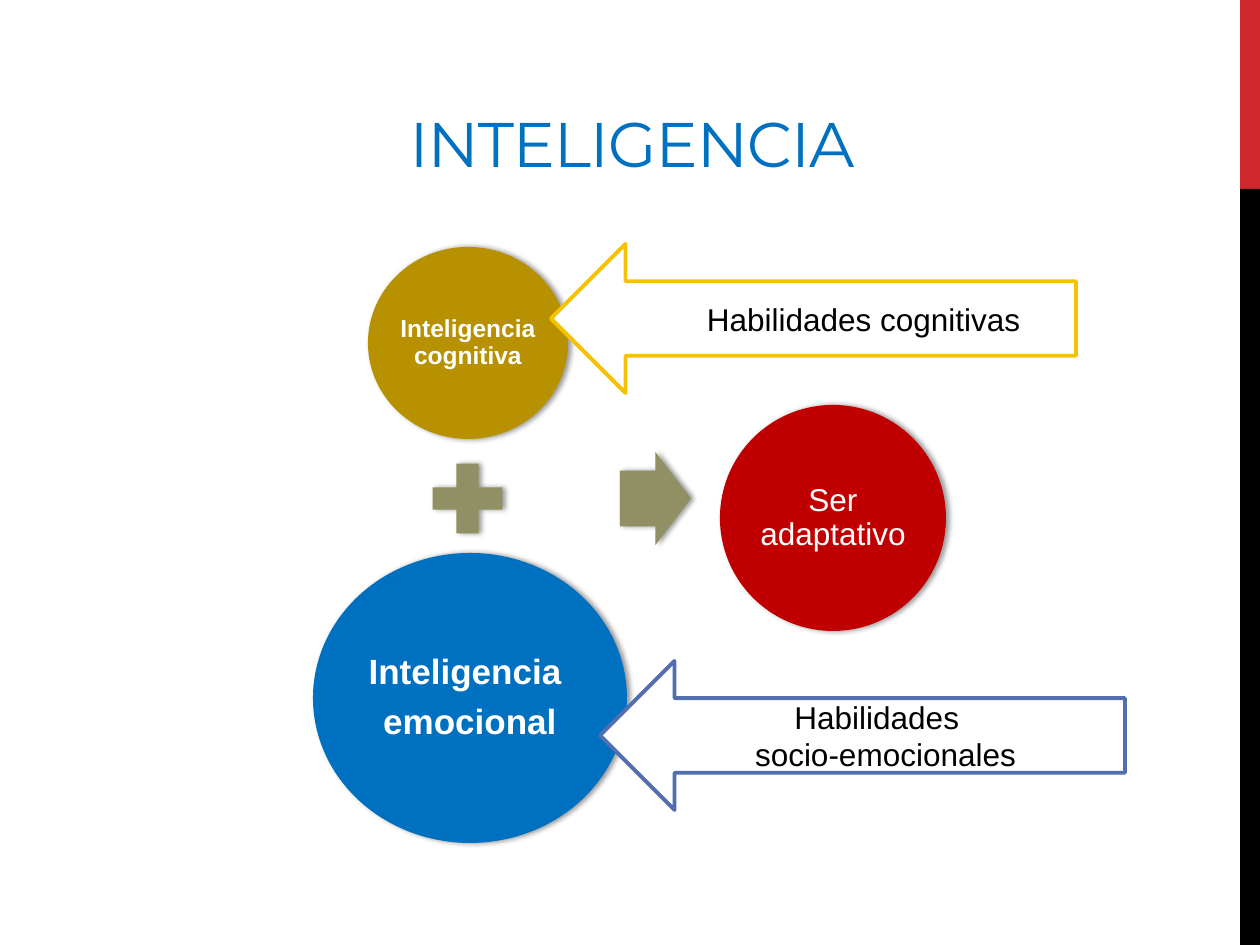
from dataclasses import dataclass

import lxml.etree
import pptx
import pptx.dml.color
import pptx.enum.shapes
import pptx.enum.text
import pptx.oxml.ns
import pptx.util

EMU_PER_PX = 914400 / 126
SHAPE = pptx.enum.shapes.MSO_SHAPE
ANCHOR = pptx.enum.text.MSO_ANCHOR


@dataclass
class Box:
    left: int
    top: int
    width: int
    height: int


@dataclass
class Circle:
    box: Box
    fill: str
    lines: list[str]
    size: int
    bold: bool
    inset: int


@dataclass
class Callout:
    box: Box
    outline: str
    lines: list[str]
    indent: int


CIRCLES = [
    Circle(Box(368, 247, 200, 192), "B89101", ["Inteligencia cognitiva"], 14, True, 2),
    Circle(Box(313, 553, 314, 290), "0070C0", ["Inteligencia ", "emocional"], 20, True, 4),
    Circle(Box(720, 405, 226, 226), "C00000", ["Ser adaptativo"], 18, False, 4),
]
CALLOUTS = [
    Callout(Box(551, 244, 525, 149), "F5C201", ["Habilidades cognitivas"], 63),
    Callout(Box(600, 661, 525, 149), "526DB0", ["Habilidades ", " socio-emocionales"], 0),
]
OPERATORS = [
    (SHAPE.MATH_PLUS, Box(420, 451, 95, 95)),
    (SHAPE.RIGHT_ARROW, Box(620, 452, 71, 93)),
]
SIDE_BARS = [(Box(1240, 0, 20, 189), "D1282E"), (Box(1240, 189, 20, 756), "000000")]


def px(length: int) -> int:
    return round(length * EMU_PER_PX)


def color(code: str) -> pptx.dml.color.RGBColor:
    return pptx.dml.color.RGBColor.from_string(code)


def edges(box: Box) -> list[int]:
    return [px(side) for side in (box.left, box.top, box.width, box.height)]


def add_figure(slide, kind, box: Box, fill: str, outline: str = ""):
    figure = slide.shapes.add_shape(kind, *edges(box))
    figure.shadow.inherit = False
    figure.fill.solid()
    figure.fill.fore_color.rgb = color(fill)
    if outline:
        figure.line.color.rgb = color(outline)
        figure.line.width = pptx.util.Pt(2.25)
    else:
        figure.line.fill.background()
    return figure


def add_shadow(figure) -> None:
    """Cast a soft black shadow to the right of the figure."""
    qn = pptx.oxml.ns.qn
    effects = figure.element.spPr.find(qn("a:effectLst"))
    shadow = lxml.etree.SubElement(
        effects, qn("a:outerShdw"), blurRad=str(pptx.util.Pt(3.1)),
        dist=str(pptx.util.Pt(1.8)), dir="0", rotWithShape="0")
    black = lxml.etree.SubElement(shadow, qn("a:srgbClr"), val="000000")
    lxml.etree.SubElement(black, qn("a:alpha"), val="40000")


def write_text(shape, lines: list[str], *, size: int, ink: str, font: str = "Arial",
               bold: bool = False, anchor=ANCHOR.MIDDLE, inset: int | None = None,
               line_spacing: float = 1.0, space_after: float = 0, indent: int = 0,
               tracking: int = 0) -> None:
    frame = shape.text_frame
    frame.word_wrap = True
    frame.auto_size = pptx.enum.text.MSO_AUTO_SIZE.NONE
    frame.vertical_anchor = anchor
    if inset is not None:
        frame.margin_left = frame.margin_right = px(inset)
        frame.margin_top = frame.margin_bottom = px(inset)
    for index, line in enumerate(lines):
        paragraph = frame.add_paragraph() if index else frame.paragraphs[0]
        paragraph.alignment = pptx.enum.text.PP_ALIGN.CENTER
        paragraph.line_spacing = line_spacing
        paragraph.space_after = pptx.util.Pt(space_after)
        if indent:
            paragraph.level = 1
            paragraph._p.get_or_add_pPr().set("marL", str(px(indent)))
        run = paragraph.add_run()
        run.text = line
        run.font.name = font
        run.font.size = pptx.util.Pt(size)
        run.font.bold = bold
        run.font.color.rgb = color(ink)
        if tracking:
            run._r.get_or_add_rPr().set("spc", str(tracking))


def add_circle(slide, circle: Circle) -> None:
    disc = add_figure(slide, SHAPE.OVAL, circle.box, circle.fill)
    add_shadow(disc)
    write_text(disc, circle.lines, size=circle.size, ink="FFFFFF", bold=circle.bold,
               inset=circle.inset, line_spacing=0.9, space_after=0.35 * circle.size)


def add_callout(slide, callout: Callout) -> None:
    arrow = add_figure(slide, SHAPE.LEFT_ARROW, callout.box, "FFFFFF", callout.outline)
    write_text(arrow, callout.lines, size=18, ink="000000", indent=callout.indent)


def main() -> None:
    deck = pptx.Presentation()
    deck.slide_width, deck.slide_height = px(1260), px(945)
    slide = deck.slides.add_slide(deck.slide_layouts[5])

    for box, fill in SIDE_BARS:
        add_figure(slide, SHAPE.RECTANGLE, box, fill)

    title = slide.shapes.title
    title.left, title.top, title.width, title.height = edges(Box(233, 66, 798, 120))
    write_text(title, ["INTELIGENCIA"], size=36, ink="0070C0", font="Montserrat",
               anchor=ANCHOR.BOTTOM, tracking=-60)

    for circle in CIRCLES:
        add_circle(slide, circle)
    for kind, box in OPERATORS:
        operator = add_figure(slide, kind, box, "919064")
        add_shadow(operator)
        if kind == SHAPE.RIGHT_ARROW:
            operator.adjustments[0] = 0.6
    for callout in CALLOUTS:
        add_callout(slide, callout)

    deck.save("out.pptx")


if __name__ == "__main__":
    main()
